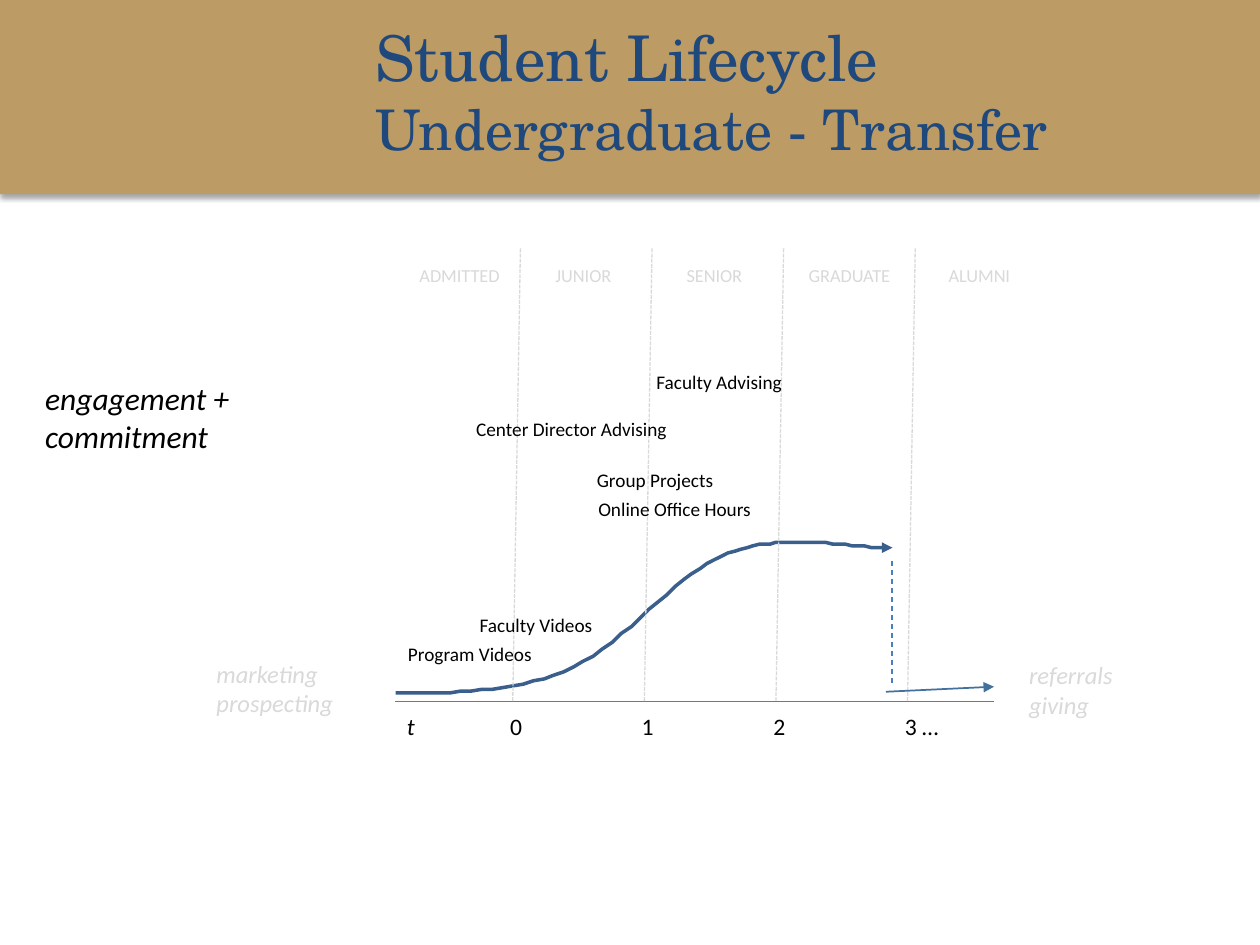
import pptx
import pptx.util
import pptx.dml.color
import pptx.enum.dml
import pptx.enum.shapes
import pptx.enum.text
import pptx.oxml
import pptx.oxml.ns
from dataclasses import dataclass

Pt = pptx.util.Pt
Dash = pptx.enum.dml.MSO_LINE
NS = pptx.oxml.ns.nsdecls("a")


@dataclass(frozen=True)
class Theme:
    body: str = "Calibri"
    head: str = "TeX Gyre Schola"
    gold: str = "BC9B65"
    navy: str = "1F497D"
    curve: str = "3A5F8C"
    axis: str = "4B7EBC"
    arrow: str = "41719C"
    pale: str = "D9D9D9"
    ink: str = "000000"
    title: float = 36
    sub: float = 32
    large: float = 18
    side: float = 14
    tick: float = 13.5
    event: float = 11
    phase: float = 10.5


THEME = Theme()
STEP = 75.2  # width of one year on the time axis


def rgb(code):
    return pptx.dml.color.RGBColor.from_string(code)


def style(para, size, color, name=THEME.body, slant=None):
    font = para.font
    font.name, font.size, font.italic = name, Pt(size), slant
    font.color.rgb = rgb(color)


def label(slide, text, box, size, color, slant=None, wrap=False):
    shape = slide.shapes.add_textbox(*map(Pt, box))
    frame = shape.text_frame
    frame.word_wrap = wrap
    frame.text = text
    for para in frame.paragraphs:
        style(para, size, color, slant=slant)


def stroke(shape, color, width, dash=None, head=False):
    line = shape.line
    line.color.rgb = rgb(color)
    line.width = Pt(width)
    if dash:
        line.dash_style = dash
    if head:
        tail = pptx.oxml.parse_xml(f'<a:tailEnd {NS} type="triangle"/>')
        shape.element.spPr.find(pptx.oxml.ns.qn("a:ln")).append(tail)


def rule(slide, ends, color, width, dash=None, head=False):
    kind = pptx.enum.shapes.MSO_CONNECTOR.STRAIGHT
    line = slide.shapes.add_connector(kind, *map(Pt, ends))
    stroke(line, color, width, dash, head)
    line.element.spPr.append(pptx.oxml.parse_xml(f"<a:effectLst {NS}/>"))


def bezier(start, curves, steps=16):
    """Points along a chain of cubic curves."""
    points = [start]
    for b, c, d in curves:
        a = points[-1]
        for i in range(1, steps + 1):
            t = i / steps
            u = 1 - t
            points.append(tuple(
                u**3 * p + 3 * u * u * t * q + 3 * u * t * t * r + t**3 * s
                for p, q, r, s in zip(a, b, c, d)))
    return points


def trend(slide, start, curves):
    first, *rest = bezier(start, curves)
    build = slide.shapes.build_freeform(*first, scale=float(Pt(1)))
    build.add_line_segments(rest, close=False)
    shape = build.convert_to_shape()
    shape.fill.background()
    shape.shadow.inherit = False
    stroke(shape, THEME.curve, 2, head=True)


def header(slide):
    title = slide.shapes.title
    kind = pptx.enum.shapes.MSO_SHAPE.RECTANGLE
    band = slide.shapes.add_shape(kind, 0, Pt(-0.7), Pt(720), Pt(111.6))
    band.fill.solid()
    band.fill.fore_color.rgb = rgb(THEME.gold)
    band.line.fill.background()
    band.element.spPr.append(pptx.oxml.parse_xml(
        f'<a:effectLst {NS}><a:outerShdw blurRad="{Pt(3.1)}" dist="{Pt(1.8)}" '
        'dir="5400000" rotWithShape="0"><a:srgbClr val="000000">'
        '<a:alpha val="35000"/></a:srgbClr></a:outerShdw></a:effectLst>'))
    title.element.addprevious(band.element)  # band lies behind the title

    title.left, title.top = Pt(207.4), Pt(6.5)
    title.width, title.height = Pt(522), Pt(90)
    frame = title.text_frame
    frame.text = "Student Lifecycle\nUndergraduate - Transfer"
    frame.vertical_anchor = pptx.enum.text.MSO_ANCHOR.MIDDLE
    frame.auto_size = pptx.enum.text.MSO_AUTO_SIZE.NONE
    for para, size in zip(frame.paragraphs, (THEME.title, THEME.sub)):
        para.alignment = pptx.enum.text.PP_ALIGN.LEFT
        style(para, size, THEME.navy, THEME.head)


def main():
    deck = pptx.Presentation()
    deck.slide_width, deck.slide_height = Pt(720), Pt(540)
    slide = deck.slides.add_slide(deck.slide_layouts[5])
    header(slide)

    # Engagement curve and time axis
    trend(slide, (226, 396), [
        ((259, 396), (292.3, 396), (322, 383.8)),
        ((352, 371.5), (381.6, 334.8), (404, 322)),
        ((427, 309.6), (442, 310.3), (458, 309.6)),
        ((473.8, 309.6), (502.6, 314), (509.8, 313.2))])
    rule(slide, (226, 401, 568, 401), THEME.axis, 0.75)

    # Year dividers and ticks
    for i, tick in enumerate(("0", "1", "2", "3 …")):
        shift = i * STEP
        rule(slide, (297.4 + shift, 142, 293 + shift, 401),
             THEME.pale, 0.75, Dash.SQUARE_DOT)
        wide = 21.6 if len(tick) == 1 else 33.8
        label(slide, tick, (284.4 + shift, 403.2, wide, 23.8),
              THEME.tick, THEME.ink)
    label(slide, "t", (225.4, 403.2, 19.4, 23.8), THEME.tick, THEME.ink, True)

    # Phases
    for text, left, wide in (
            ("ADMITTED", 232.6, 61.2), ("JUNIOR", 310.3, 46.8),
            ("SENIOR", 385.2, 46.8), ("GRADUATE", 455, 63.4),
            ("ALUMNI", 535, 50.4)):
        label(slide, text, (left, 147.6, wide, 20), THEME.phase, THEME.pale)

    # Drop to the alumni stage
    rule(slide, (506.2, 395.3, 568, 392.4), THEME.arrow, 1, head=True)
    rule(slide, (509.8, 320.4, 509.8, 391), THEME.axis, 0.75, Dash.DASH)

    # Side notes
    label(slide, "engagement +\ncommitment", (18.7, 213, 121.7, 51),
          THEME.large, THEME.ink, True, wrap=True)
    label(slide, "marketing\nprospecting", (116.6, 373, 82, 41),
          THEME.side, THEME.pale, True)
    label(slide, "referrals\ngiving", (581, 373.7, 62.6, 41),
          THEME.side, THEME.pale, True)

    # Touchpoints
    for text, left, top, wide in (
            ("Faculty Advising", 368, 208, 86.4),
            ("Center Director Advising", 265, 234.7, 124.6),
            ("Group Projects", 334, 264.2, 81.4),
            ("Online Office Hours", 334.8, 280.8, 103),
            ("Faculty Videos", 267, 347, 79.2),
            ("Program Videos", 226, 363.6, 85.7)):
        label(slide, text, (left, top, wide, 20.9), THEME.event, THEME.ink)

    deck.save("out.pptx")


if __name__ == "__main__":
    main()
